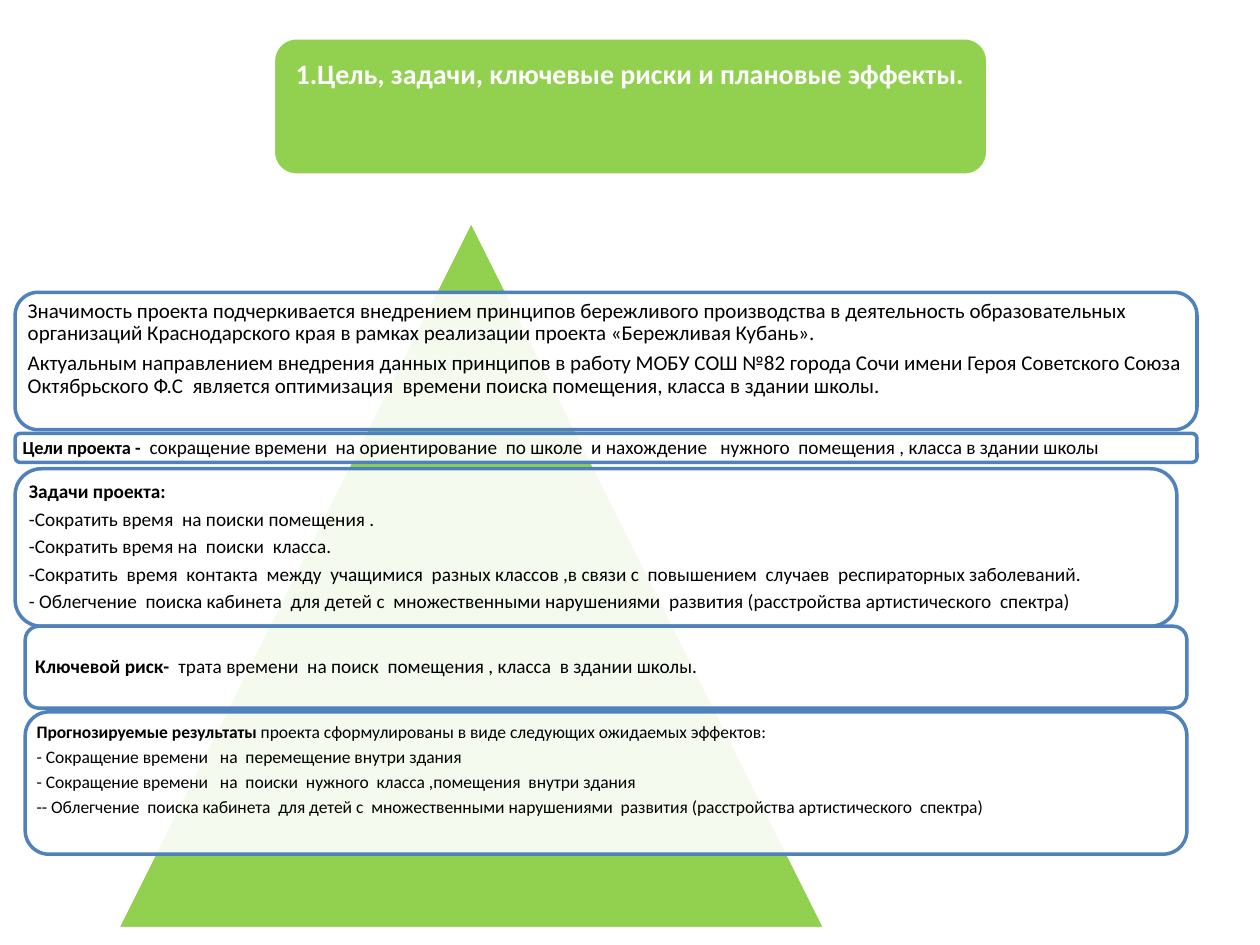
from lxml import etree
from pptx import Presentation
from pptx.dml.color import RGBColor
from pptx.enum import shapes, text
from pptx.oxml import ns
from pptx.util import Inches, Pt

COLORS = {"green": "92D050", "blue": "4F81BD", "white": "FFFFFF", "black": "000000"}

GOAL = [("Цели проекта -", "  сокращение времени  на ориентирование  по школе  и нахождение   "
         "нужного  помещения , класса в здании школы")]
VALUE = [
    ("", "Значимость проекта подчеркивается внедрением принципов бережливого производства "
         "в деятельность образовательных организаций Краснодарского края в рамках реализации "
         "проекта «Бережливая Кубань»."),
    ("", "Актуальным направлением внедрения данных принципов в работу МОБУ СОШ №82 города Сочи "
         "имени Героя Советского Союза Октябрьского Ф.С  является оптимизация  времени поиска "
         "помещения, класса в здании школы."),
]
HELP = ("Облегчение  поиска кабинета  для детей с  множественными нарушениями  развития "
        "(расстройства артистического  спектра)")
TASKS = [
    ("Задачи проекта:", ""),
    ("", "-Сократить время  на поиски помещения ."),
    ("", "-Сократить время на  поиски  класса."),
    ("", "-Сократить  время  контакта  между  учащимися  разных классов ,в связи с  повышением  "
         "случаев  респираторных заболеваний."),
    ("", "- " + HELP),
]
RISK = [("Ключевой риск-  ", "трата времени  на поиск  помещения , класса  в здании школы.")]
GAINS = [
    ("Прогнозируемые результаты ", "проекта сформулированы в виде следующих ожидаемых эффектов:"),
    ("", "- Сокращение времени   на  перемещение внутри здания"),
    ("", "- Сокращение времени   на  поиски  нужного  класса ,помещения  внутри здания"),
    ("", "-- " + HELP),
]


def paint(color):
    return RGBColor.from_string(COLORS[color])


def add_shape(slide, kind, box, fill, line, alpha=None):
    """Add a plain preset shape; alpha is its opacity in percent."""
    shape = slide.shapes.add_shape(kind, *map(Inches, box))
    shape.shadow.inherit = False
    shape.fill.solid()
    shape.fill.fore_color.rgb = paint(fill)
    shape.line.color.rgb = paint(line)
    shape.line.width = Pt(2)
    if alpha:
        tone = shape.fill._xPr.find(".//" + ns.qn("a:srgbClr"))
        etree.SubElement(tone, ns.qn("a:alpha"), val=str(alpha * 1000))


def write(slide, box, paras, holder=None, size=11, lead=None, color="black",
          align=text.PP_ALIGN.LEFT, anchor=text.MSO_ANCHOR.MIDDLE, inset=0.05, top=None):
    """Write (bold, plain) pairs into a placeholder or a new text box, on top of all else."""
    place = [Inches(n) for n in box]
    if holder is None:
        holder = slide.shapes.add_textbox(*place)
    else:
        holder.left, holder.top, holder.width, holder.height = place
        slide.shapes._spTree.append(holder._element)
    frame = holder.text_frame
    frame.word_wrap = True
    frame.auto_size = text.MSO_AUTO_SIZE.NONE
    frame.vertical_anchor = anchor
    frame.margin_left = frame.margin_right = frame.margin_bottom = Inches(inset)
    frame.margin_top = Inches(inset if top is None else top)
    for i, pair in enumerate(paras):
        para = frame.add_paragraph() if i else frame.paragraphs[0]
        para.alignment = align
        para.line_spacing = 0.9
        para.space_before = Pt(0)
        para.space_after = Pt(round(0.35 * size, 1))
        props = para._p.get_or_add_pPr()
        props.set("marL", "0")
        props.set("indent", "0")
        etree.SubElement(props, ns.qn("a:buNone"))
        for words, bold in zip(pair, (True, False)):
            if words:
                run = para.add_run()
                run.text = words
                run.font.name = "Calibri"
                run.font.size = Pt(lead if bold and lead else size)
                run.font.bold = bold
                run.font.color.rgb = paint(color)


def add_panel(slide, box, pad, paras, **form):
    """Add a framed panel with its text set in by pad."""
    add_shape(slide, shapes.MSO_SHAPE.ROUNDED_RECTANGLE, box, "white", "blue", alpha=90)
    left, top, width, height = box
    write(slide, (left + pad, top + pad, width - 2 * pad, height - 2 * pad), paras, **form)


def main():
    deck = Presentation()
    deck.slide_width, deck.slide_height = Inches(10), Inches(7.5)
    slide = deck.slides.add_slide(deck.slide_layouts[3])
    title, first, second = slide.placeholders
    high = text.MSO_ANCHOR.TOP

    add_shape(slide, shapes.MSO_SHAPE.ROUNDED_RECTANGLE, (2.17, 0.3, 5.67, 1.09),
              "green", "white")
    write(slide, (2.22, 0.35, 5.56, 0.98),
          [("1.Цель, задачи, ключевые риски и плановые эффекты.", "")], holder=title,
          size=16, color="white", align=text.PP_ALIGN.CENTER, anchor=high, inset=0.07, top=0.13)

    add_shape(slide, shapes.MSO_SHAPE.ISOSCELES_TRIANGLE, (0.93, 1.75, 5.62, 5.62),
              "green", "white")
    add_panel(slide, (0.12, 2.32, 9.38, 1.09), 0.05, VALUE, size=12, anchor=high, top=0.01)
    add_panel(slide, (0.12, 3.44, 9.38, 0.23), 0.01, GOAL, lead=10.5)
    add_panel(slide, (0.12, 3.72, 9.22, 1.25), 0.06, TASKS, holder=first)
    add_panel(slide, (0.2, 4.97, 9.22, 0.65), 0.03, RISK)
    add_panel(slide, (0.2, 5.65, 9.22, 1.13), 0.05, GAINS, holder=second, size=10,
              anchor=high, inset=0.04)
    deck.save("out.pptx")


if __name__ == "__main__":
    main()
